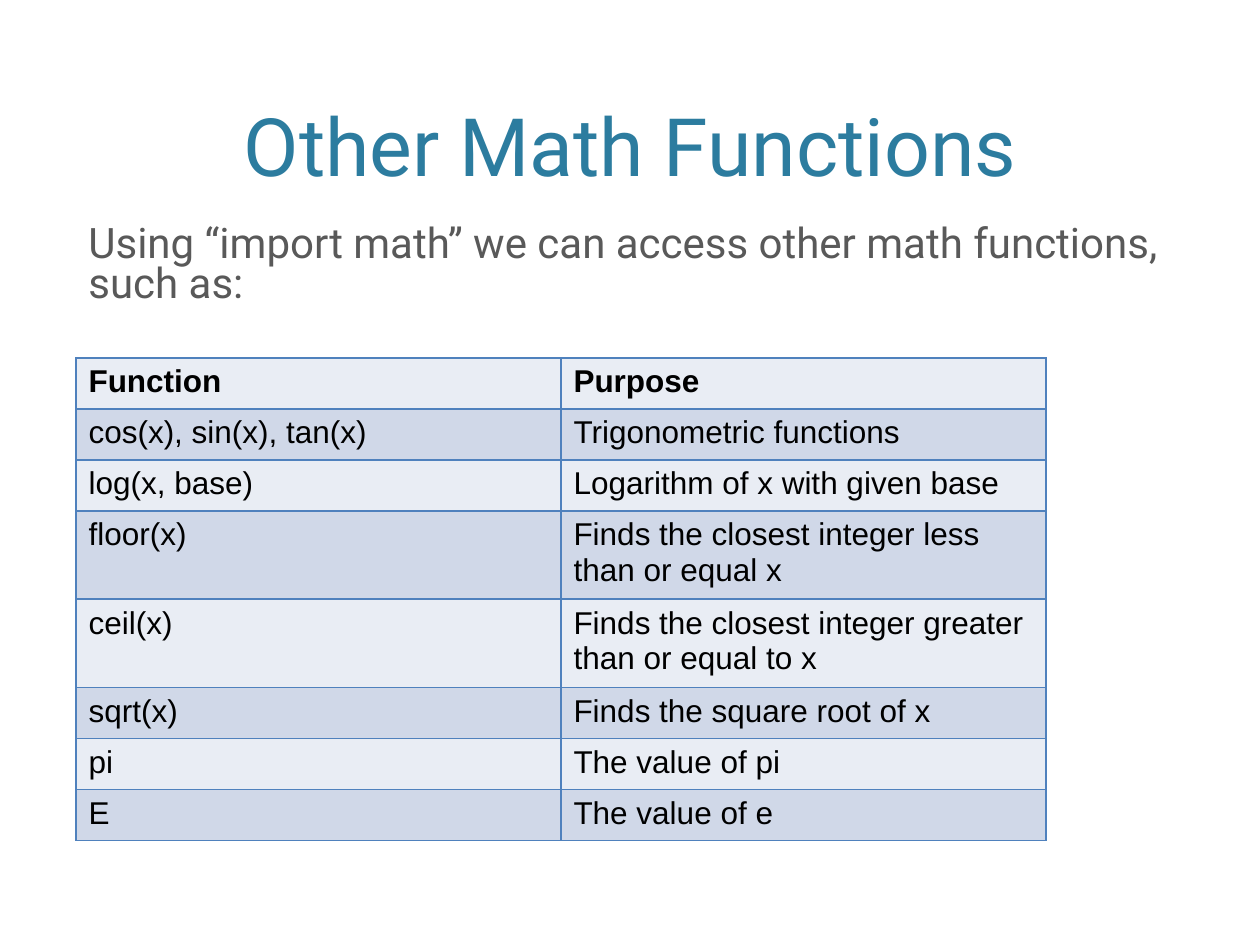
from lxml import etree
from pptx import Presentation
from pptx import util as u
from pptx.dml.color import RGBColor
from pptx.enum import text
from pptx.oxml.ns import qn

PX = 914400 // 126
COLORS = {"title": "2C7C9F", "intro": "595959", "cell": "000000",
          "light": "E9EDF4", "dark": "D0D8E8", "border": "4F81BD"}
ROWS = [
    ("Function", "Purpose"),
    ("cos(x), sin(x), tan(x)", "Trigonometric functions"),
    ("log(x, base)", "Logarithm of x with given base"),
    ("floor(x)", "Finds the closest integer less than or equal x"),
    ("ceil(x)", "Finds the closest integer greater than or equal to x"),
    ("sqrt(x)", "Finds the square root of x"),
    ("pi", "The value of pi"),
    ("E", "The value of e"),
]


def style(paragraph, font_name, size, color, bold=False):
    font = paragraph.font
    font.name, font.size, font.bold = font_name, u.Pt(size), bold
    font.color.rgb = RGBColor.from_string(COLORS[color])


def add_borders(cell):
    properties = cell._tc.get_or_add_tcPr()
    for index, side in enumerate(("a:lnL", "a:lnR", "a:lnT", "a:lnB")):
        line = etree.Element(qn(side), w=str(u.Pt(1)))
        fill = etree.SubElement(line, qn("a:solidFill"))
        etree.SubElement(fill, qn("a:srgbClr"), val=COLORS["border"])
        properties.insert(index, line)


prs = Presentation()
prs.slide_width, prs.slide_height = 1260 * PX, 945 * PX
slide = prs.slides.add_slide(prs.slide_layouts[5])

# Title
title = slide.shapes.title
title.left, title.top, title.width, title.height = (
    n * PX for n in (76, 15, 1108, 184))
title.text_frame.text = "Other Math Functions"
title.text_frame.vertical_anchor = text.MSO_ANCHOR.BOTTOM
title.text_frame.paragraphs[0].alignment = text.PP_ALIGN.CENTER
style(title.text_frame.paragraphs[0], "Roboto", 46, "title")

# Introduction
intro = slide.shapes.add_textbox(*(n * PX for n in (76, 220, 1108, 599)))
intro.text_frame.word_wrap = True
intro.text_frame.text = ("Using “import math” we can access other math "
                         "functions, such as:")
intro.text_frame.paragraphs[0].line_spacing = 0.8
style(intro.text_frame.paragraphs[0], "Roboto", 24, "intro")

# Table of functions; rows with two lines are taller
functions = slide.shapes.add_table(
    len(ROWS), 2, 76 * PX, 358 * PX, 970 * PX, 472 * PX).table
functions.first_row = functions.horz_banding = False
for column in functions.columns:
    column.width = 485 * PX
for r, row in enumerate(ROWS):
    functions.rows[r].height = (83 if len(row[1]) > 40 else 51) * PX
    for c, words in enumerate(row):
        cell = functions.cell(r, c)
        cell.text = words
        cell.fill.solid()
        cell.fill.fore_color.rgb = RGBColor.from_string(
            COLORS["dark" if r % 2 else "light"])
        style(cell.text_frame.paragraphs[0], "Arial", 18, "cell", r == 0)
        add_borders(cell)

prs.save("out.pptx")
